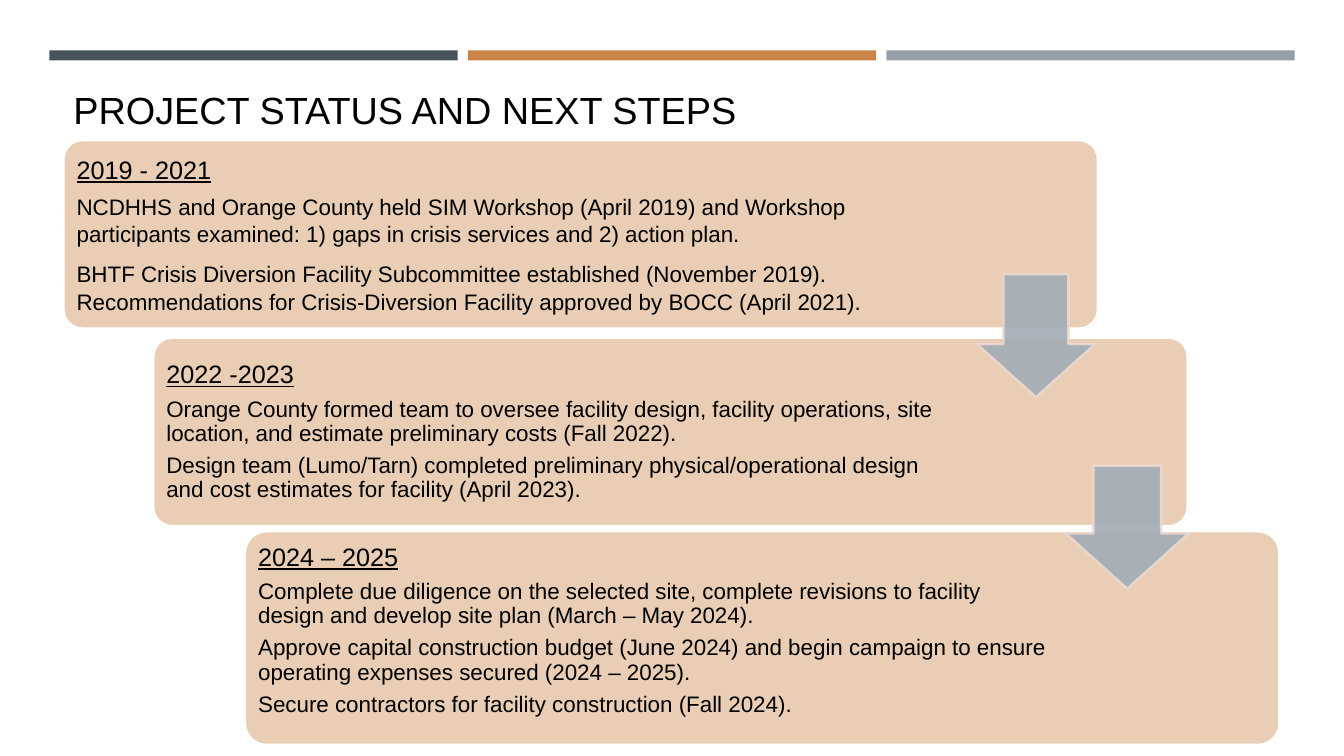
import pptx
import pptx.util
import pptx.dml.color
import pptx.enum.shapes
import pptx.enum.text
import pptx.oxml
import pptx.oxml.ns

PX = 9144  # EMU per px, 100 px to the inch
FONT = "Arial"
COLORS = {
    "slate": "465359", "orange": "C98447", "gray": "969FA7",
    "card": "E9CEB5", "card_line": "FFFFFF",
    "arrow": "A2ACB5", "arrow_line": "EBD9CF", "text": "000000",
}
SHAPES = pptx.enum.shapes.MSO_SHAPE
ANCHOR = pptx.enum.text.MSO_ANCHOR

# Each period: card box, text width, anchor, heading,
# then its steps as (text, line spacing, space after in points)
PERIODS = [
    ((63, 139, 1026, 187), 824, ANCHOR.MIDDLE, ("2019 - 2021", 1, 6.3), [
        ("NCDHHS and Orange County held SIM Workshop (April 2019) and Workshop "
         "participants examined: 1) gaps in crisis services and 2) action plan.", 1, 0.4),
        ("BHTF Crisis Diversion Facility Subcommittee established (November 2019).", 1.5, 0.4),
        ("Recommendations for Crisis-Diversion Facility approved by BOCC (April 2021).", 1, 0.4),
    ]),
    ((152, 335, 1026, 187), 803, ANCHOR.MIDDLE, ("2022 -2023", 0.9, 6.3), [
        ("Orange County formed team to oversee facility design, facility operations, "
         "site location, and estimate preliminary costs (Fall 2022).", 0.9, 5.6),
        ("Design team (Lumo/Tarn) completed preliminary physical/operational design and "
         "cost estimates for facility (April 2023).", 0.9, 5.6),
    ]),
    ((243, 527, 1026, 212), 802, ANCHOR.TOP, ("2024 – 2025", 0.9, 6.3), [
        ("Complete due diligence on the selected site, complete revisions to facility "
         "design and develop site plan (March – May 2024).", 0.9, 5.6),
        ("Approve capital construction budget (June 2024) and begin campaign to ensure "
         "operating expenses secured (2024 – 2025).", 0.9, 5.6),
        ("Secure contractors for facility construction (Fall 2024).", 0.9, 0),
    ]),
]
ARROWS = [(969, 272, 117, 122), (1057, 462, 122, 122)]


def rgb(name):
    return pptx.dml.color.RGBColor.from_string(COLORS[name])


def emu(box):
    return [pptx.util.Emu(round(length * PX)) for length in box]


def add_block(slide, preset, box, fill, line=None):
    block = slide.shapes.add_shape(preset, *emu(box))
    block.shadow.inherit = False
    block.fill.solid()
    block.fill.fore_color.rgb = rgb(fill)
    if line:
        block.line.color.rgb = rgb(line)
        block.line.width = pptx.util.Pt(1.75)
    else:
        block.line.fill.background()
    return block


def add_text_frame(slide, box, anchor, inset):
    frame = slide.shapes.add_textbox(*emu(box)).text_frame
    frame.word_wrap = True
    frame.vertical_anchor = anchor
    frame.margin_left = frame.margin_right = inset * PX
    frame.margin_top = frame.margin_bottom = inset * PX
    return frame


def write(paragraph, text, size, spacing, after=0, underline=False):
    paragraph.text = text
    paragraph.line_spacing = spacing
    paragraph.space_after = pptx.util.Pt(after)
    font = paragraph.runs[0].font
    font.name = FONT
    font.size = pptx.util.Pt(size)
    font.color.rgb = rgb("text")
    font.underline = underline


def add_header_bars(slide, box):
    left, top, width, height = box
    gap = 10
    bar_width = (width - 2 * gap) / 3
    for index, color in enumerate(("slate", "orange", "gray")):
        bar_left = left + index * (bar_width + gap)
        add_block(slide, SHAPES.RECTANGLE, (bar_left, top, bar_width, height), color)


def add_title(slide, box):
    frame = add_text_frame(slide, box, ANCHOR.BOTTOM, 10)
    frame.margin_top = frame.margin_bottom = 5 * PX
    write(frame.paragraphs[0], "PROJECT STATUS AND NEXT STEPS", 27, 0.9)


def add_period(slide, box, text_width, anchor, heading, steps):
    left, top, width, height = box
    card = add_block(slide, SHAPES.ROUNDED_RECTANGLE, box, "card", "card_line")
    card.adjustments[0] = 0.1
    pad = 6
    text_box = (left + pad, top + pad, text_width, height - 2 * pad)
    frame = add_text_frame(slide, text_box, anchor, 7)
    title, spacing, after = heading
    write(frame.paragraphs[0], title, 18, spacing, after, underline=True)
    for step, spacing, after in steps:
        write(frame.add_paragraph(), step, 16, spacing, after)


def add_arrow(slide, box):
    """Place a slightly transparent arrow leading to the next period."""
    arrow = add_block(slide, SHAPES.DOWN_ARROW, box, "arrow", "arrow_line")
    arrow.adjustments[0] = 0.55
    arrow.adjustments[1] = 0.45
    for color in arrow._element.spPr.iter(pptx.oxml.ns.qn("a:srgbClr")):
        alpha = pptx.oxml.parse_xml(
            f'<a:alpha {pptx.oxml.ns.nsdecls("a")} val="90000"/>')
        color.append(alpha)


def main():
    deck = pptx.Presentation()
    deck.slide_width, deck.slide_height = emu((1333, 750))
    slide = deck.slides.add_slide(deck.slide_layouts[6])
    add_header_bars(slide, (49, 50, 1235, 10))
    add_title(slide, (63, 80, 1206, 57))
    for period in PERIODS:
        add_period(slide, *period)
    for arrow_box in ARROWS:
        add_arrow(slide, arrow_box)
    deck.save("out.pptx")


if __name__ == "__main__":
    main()
